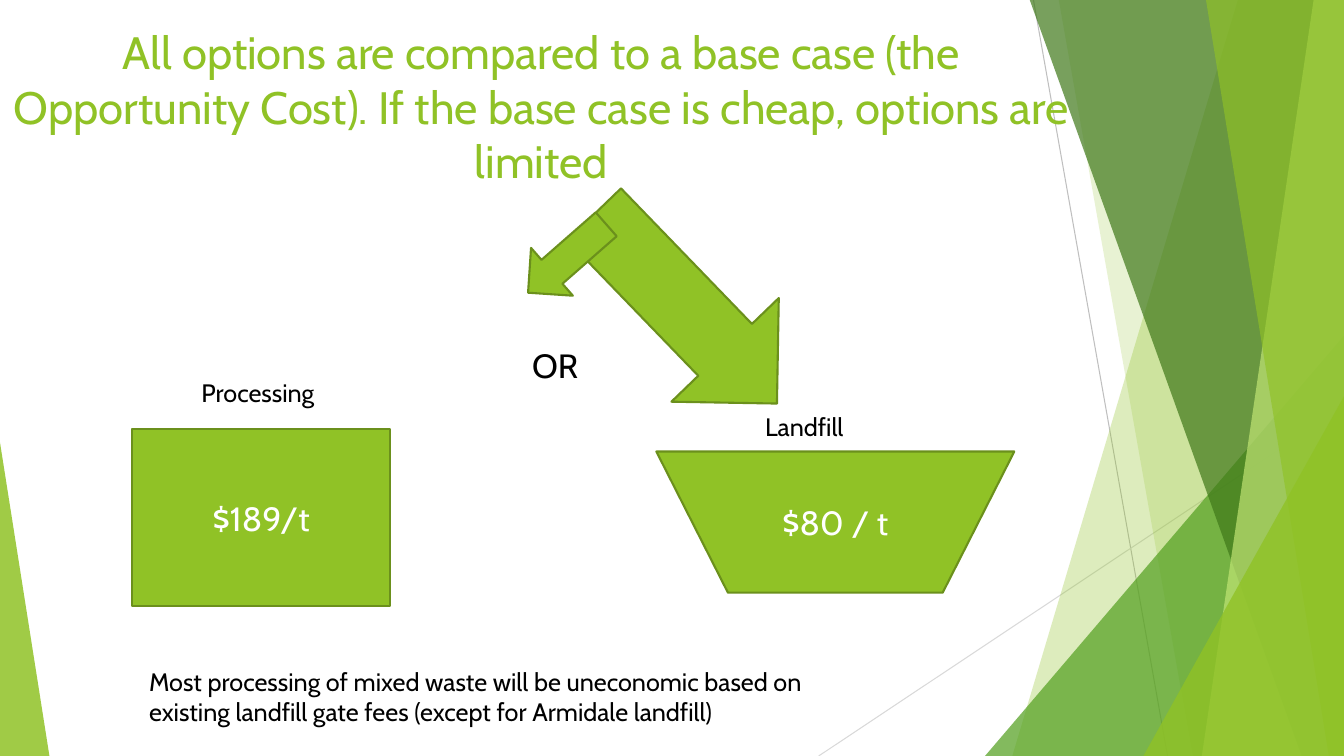
from lxml import etree
from pptx import Presentation
from pptx.dml.color import RGBColor
from pptx.enum.shapes import MSO_CONNECTOR, MSO_SHAPE
from pptx.enum.text import MSO_ANCHOR, MSO_AUTO_SIZE, PP_ALIGN
from pptx.oxml.ns import qn
from pptx.util import Inches, Pt

STRAIGHT = MSO_CONNECTOR.STRAIGHT
TRIANGLE = MSO_SHAPE.ISOSCELES_TRIANGLE
RECTANGLE = MSO_SHAPE.RECTANGLE
PIT = MSO_SHAPE.FLOWCHART_MANUAL_OPERATION
DOWN_ARROW = MSO_SHAPE.DOWN_ARROW
TOP, MIDDLE = MSO_ANCHOR.TOP, MSO_ANCHOR.MIDDLE
LEFT, CENTER = PP_ALIGN.LEFT, PP_ALIGN.CENTER

THEME = {
    "font": "Cabin",
    "green": "90C226", "leaf": "54A021", "forest": "3F7819", "lime": "C0E474",
    "outline": "6B901C", "white": "FFFFFF", "black": "000000",
    "gray": "BFBFBF", "light_gray": "D9D9D9",
    "title": 32.4, "value": 24, "body": 18,
}
WIDTH, HEIGHT, BLEED = 13.33, 7.5, -0.01


def paint(shape, color, opacity=100, outline=None):
    shape.shadow.inherit = False
    shape.fill.solid()
    shape.fill.fore_color.rgb = RGBColor.from_string(THEME[color])
    if opacity < 100:
        color_element = shape.element.spPr.find(qn("a:solidFill"))[0]
        etree.SubElement(color_element, qn("a:alpha"), val=str(opacity * 1000))
    if outline:
        shape.line.color.rgb = RGBColor.from_string(THEME[outline])
        shape.line.width = Pt(1.5)
    else:
        shape.line.fill.background()


def write(shape, text, size, color, align, anchor):
    frame = shape.text_frame
    frame.word_wrap = True
    frame.auto_size = MSO_AUTO_SIZE.NONE
    frame.vertical_anchor = anchor
    paragraph = frame.paragraphs[0]
    paragraph.text = text
    paragraph.alignment = align
    paragraph.font.name = THEME["font"]
    paragraph.font.size = Pt(THEME[size])
    paragraph.font.color.rgb = RGBColor.from_string(THEME[color])


presentation = Presentation()
presentation.slide_width = Inches(WIDTH)
presentation.slide_height = Inches(HEIGHT)
slide = presentation.slides.add_slide(presentation.slide_layouts[5])
shapes = slide.shapes

for start_x, start_y, end_x, end_y, color in [
    (10.25, 0, 11.58, HEIGHT, "gray"),
    (WIDTH, 4.03, 8.12, HEIGHT, "light_gray"),
]:
    line = shapes.add_connector(
        STRAIGHT, Inches(start_x), Inches(start_y), Inches(end_x), Inches(end_y))
    line.line.color.rgb = RGBColor.from_string(THEME[color])
    line.line.width = Pt(0.75)
    etree.SubElement(line.element.spPr, qn("a:effectLst"))

decorations = [
    ("band", (12.28, 10.04), "green", 30),
    ("band", (10.5, 11.83), "green", 20),
    ("triangle", (9.77, 3.33, 3.56, 1), "leaf", 72),
    ("band", (10.21, 12.91), "forest", 70),
    ("band", (13.03, 11.92), "lime", 70),
    ("band", (11.96, 13.18), "green", 65),
    ("triangle", (11.34, 3.93, 1.99, 1), "green", 80),
    ("triangle", (0, 4.39, 0.49, 0), "green", 85),
]
for kind, geometry, color, opacity in decorations:
    if kind == "band":
        top_x, bottom_x = geometry
        builder = shapes.build_freeform(Inches(top_x), Inches(BLEED))
        builder.add_line_segments([
            (Inches(WIDTH), Inches(BLEED)),
            (Inches(WIDTH), Inches(HEIGHT)),
            (Inches(bottom_x), Inches(HEIGHT)),
        ])
        decoration = builder.convert_to_shape()
    else:
        left, top, width, apex = geometry
        decoration = shapes.add_shape(
            TRIANGLE, Inches(left), Inches(top), Inches(width), Inches(HEIGHT - top))
        decoration.adjustments[0] = apex
    paint(decoration, color, opacity)

title = shapes.title
title.left, title.top = Inches(0), Inches(0.19)
title.width, title.height = Inches(10.74), Inches(1.44)
write(title, "All options are compared to a base case (the Opportunity Cost). "
      "If the base case is cheap, options are limited", "title", "green", CENTER, TOP)
title.element.getparent().append(title.element)

for preset, left, top, width, height, price in [
    (RECTANGLE, 1.31, 4.26, 2.56, 1.75, "$189/t"),
    (PIT, 6.51, 4.48, 3.55, 1.4, "$80 / t"),
]:
    option = shapes.add_shape(
        preset, Inches(left), Inches(top), Inches(width), Inches(height))
    paint(option, "green", outline="outline")
    write(option, price, "value", "white", CENTER, MIDDLE)

for left, top, width, height, text, size in [
    (5.18, 3.37, 1.26, 0.5, "OR", "value"),
    (7.49, 4.03, 1.44, 0.4, "Landfill", "body"),
    (1.38, 6.56, 6.83, 0.71, "Most processing of mixed waste will be uneconomic based on "
     "existing landfill gate fees (except for Armidale landfill)", "body"),
    (1.9, 3.69, 1.44, 0.4, "Processing", "body"),
]:
    label = shapes.add_textbox(Inches(left), Inches(top), Inches(width), Inches(height))
    write(label, text, size, "black", LEFT, TOP)

for left, top, width, height, rotation in [
    (6.06, 1.76, 1.48, 2.61, 316),
    (5.31, 2.05, 0.63, 1.03, 48.8),
]:
    arrow = shapes.add_shape(
        DOWN_ARROW, Inches(left), Inches(top), Inches(width), Inches(height))
    arrow.rotation = rotation
    paint(arrow, "green", outline="outline")

presentation.save("out.pptx")
